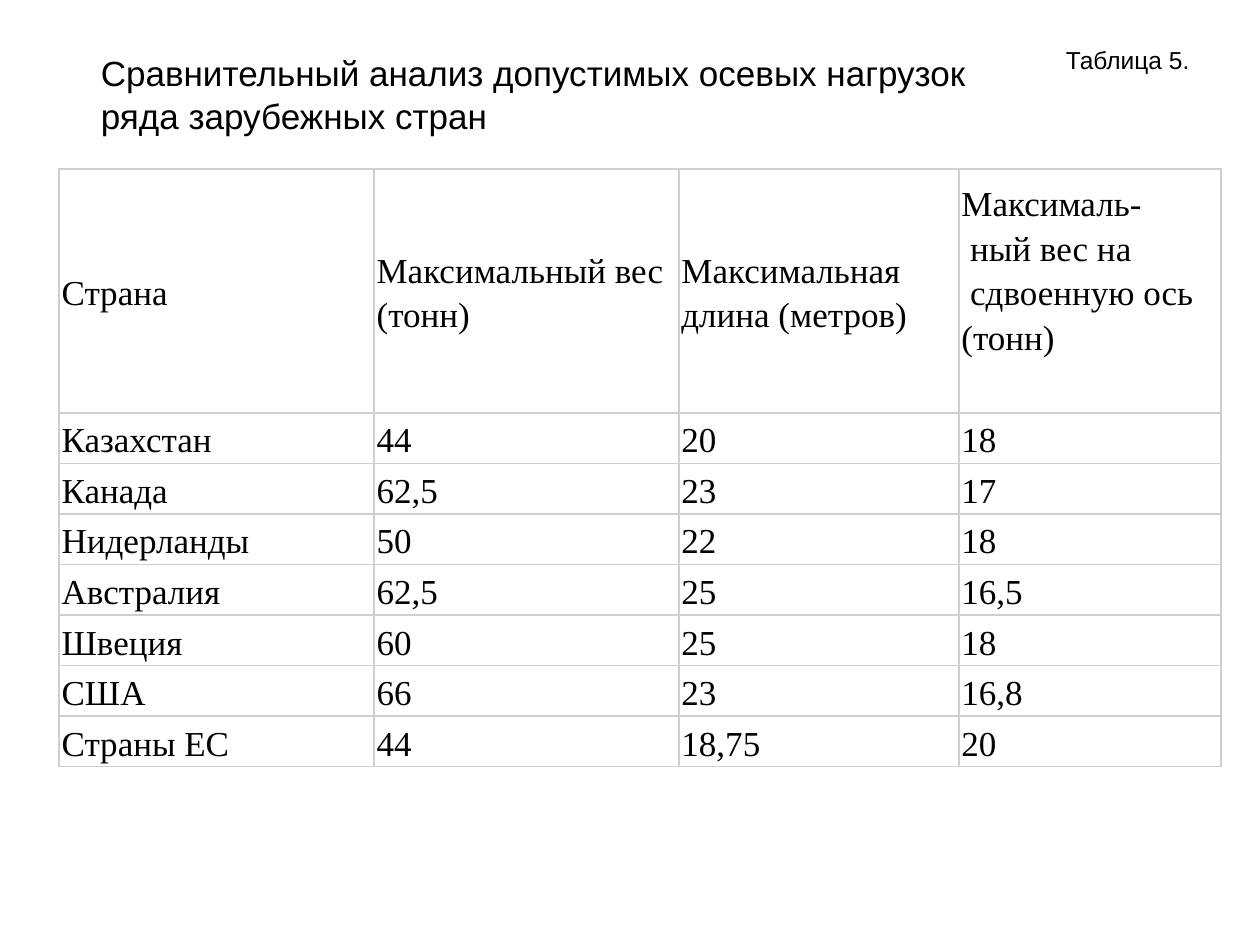
from lxml.etree import SubElement
from pptx import Presentation
from pptx.dml.color import RGBColor
from pptx.enum.text import MSO_ANCHOR as Anchor, MSO_AUTO_SIZE as AutoSize, PP_ALIGN as Align
from pptx.oxml.ns import qn
from pptx.util import Pt

BLACK = "000000"
GRID = "CFCFCF"
COLUMN_WIDTHS = [180, 174.2, 160, 149.7]
HEADER_HEIGHT, COUNTRY_HEIGHT = 139.4, 28.9
BLANK_LINE = 26
LOADS = [
    ["Страна", "Максимальный вес (тонн)", "Максимальная длина (метров)",
     "Максималь-\v ный вес на\v сдвоенную ось (тонн)"],
    ["Казахстан", "44", "20", "18"],
    ["Канада", "62,5", "23", "17"],
    ["Нидерланды", "50", "22", "18"],
    ["Австралия", "62,5", "25", "16,5"],
    ["Швеция", "60", "25", "18"],
    ["США", "66", "23", "16,8"],
    ["Страны ЕС", "44", "18,75", "20"],
]


def color(hex_code):
    return RGBColor.from_string(hex_code)


def style_font(paragraph, face, size):
    paragraph.font.name = face
    paragraph.font.size = Pt(size)
    paragraph.font.color.rgb = color(BLACK)


def add_heading(slide, left, top, width, height):
    heading = slide.shapes.title
    heading.left, heading.top = Pt(left), Pt(top)
    heading.width, heading.height = Pt(width), Pt(height)
    frame = heading.text_frame
    frame.text = "Сравнительный анализ допустимых осевых нагрузок ряда зарубежных стран"
    frame.word_wrap = True
    frame.auto_size = AutoSize.NONE
    frame.vertical_anchor = Anchor.TOP
    frame.margin_top = Pt(6)
    paragraph = frame.paragraphs[0]
    paragraph.alignment = Align.LEFT
    paragraph.line_spacing = 1.04
    style_font(paragraph, "Arial", 20)


def add_table_number(slide, left, top, width, height):
    number = slide.shapes.add_textbox(Pt(left), Pt(top), Pt(width), Pt(height))
    frame = number.text_frame
    frame.word_wrap = True
    frame.text = "Таблица 5."
    style_font(frame.paragraphs[0], "Arial", 14)


def add_borders(cell):
    properties = cell._tc.get_or_add_tcPr()
    for position, side in enumerate(("a:lnL", "a:lnR", "a:lnT", "a:lnB")):
        border = properties.makeelement(qn(side), {"w": str(Pt(1))})
        fill = SubElement(border, qn("a:solidFill"))
        SubElement(fill, qn("a:srgbClr"), val=GRID)
        properties.insert(position, border)


def fill_cell(cell, text):
    cell.text = text
    cell.vertical_anchor = Anchor.MIDDLE
    cell.margin_left = cell.margin_right = Pt(0.72)
    cell.margin_top = cell.margin_bottom = Pt(0.72)
    cell.fill.background()
    add_borders(cell)
    paragraph = cell.text_frame.paragraphs[0]
    paragraph._p.get_or_add_pPr().set("marL", str(Pt(0.72)))
    paragraph.line_spacing = 1.15
    paragraph.space_after = Pt(1)
    style_font(paragraph, "Times New Roman", 20)


def add_loads_table(slide, left, top):
    heights = [HEADER_HEIGHT] + [COUNTRY_HEIGHT] * (len(LOADS) - 1)
    table = slide.shapes.add_table(
        len(LOADS), len(COLUMN_WIDTHS), Pt(left), Pt(top),
        Pt(sum(COLUMN_WIDTHS)), Pt(sum(heights))).table
    table.first_row = table.horz_banding = False
    for column, width in zip(table.columns, COLUMN_WIDTHS):
        column.width = Pt(width)
    for row, height, texts in zip(table.rows, heights, LOADS):
        row.height = Pt(height)
        for cell, text in zip(row.cells, texts):
            fill_cell(cell, text)
    table.cell(0, len(COLUMN_WIDTHS) - 1).margin_bottom = Pt(BLANK_LINE)


def main():
    deck = Presentation()
    deck.slide_width, deck.slide_height = Pt(720), Pt(540)
    slide = deck.slides.add_slide(deck.slide_layouts[5])
    add_loads_table(slide, 33.8, 96.5)
    add_heading(slide, 50.4, 22.3, 556.6, 80)
    add_table_number(slide, 602, 22.3, 106.6, 24.5)
    deck.save("out.pptx")


if __name__ == "__main__":
    main()
